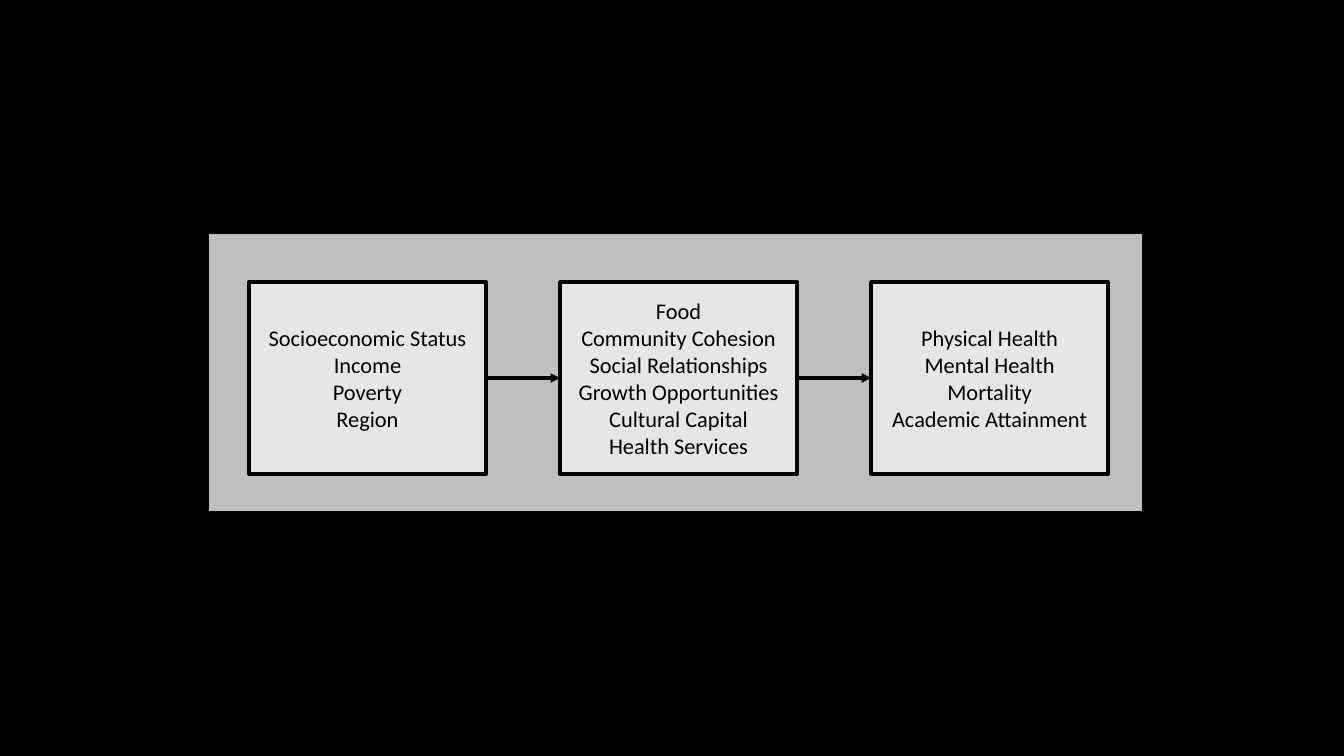
"""Build a slide that links social conditions to health outcomes."""
from lxml import etree
from pptx import Presentation
from pptx.dml.color import RGBColor
from pptx.enum import shapes, text
from pptx.oxml import ns
from pptx.util import Inches, Pt

BLACK = RGBColor(0x00, 0x00, 0x00)
WHITE = RGBColor(0xFF, 0xFF, 0xFF)
LIGHT_GREY = RGBColor(0xE7, 0xE6, 0xE6)

STAGES = [
    ["Socioeconomic Status", "Income", "Poverty", "Region"],
    ["Food", "Community Cohesion", "Social Relationships",
     "Growth Opportunities", "Cultural Capital", "Health Services"],
    ["Physical Health", "Mental Health", "Mortality", "Academic Attainment"],
]
FIRST_LEFT, STAGE_TOP = 2.47, 2.8
STAGE_WIDTH, STAGE_HEIGHT = 2.35, 1.9
STAGE_STEP = 3.085


class Diagram:
    """Hold the style and the current page of a flow diagram."""

    font_name = "Calibri"
    font_size = Pt(16)
    arrow_width = Pt(2.25)

    def __init__(self, page):
        self.page = page
        page.background.fill.solid()
        page.background.fill.fore_color.rgb = BLACK

    def rectangle(self, left, top, width, height, color, line_width):
        """Add a filled rectangle with a black outline."""
        box = self.page.shapes.add_shape(
            shapes.MSO_SHAPE.RECTANGLE,
            Inches(left), Inches(top), Inches(width), Inches(height))
        box.shadow.inherit = False
        box.fill.solid()
        box.fill.fore_color.rgb = color
        box.line.color.rgb = BLACK
        box.line.width = Pt(line_width)
        return box

    def panel(self, left, top, width, height, opacity):
        """Add a translucent white panel."""
        box = self.rectangle(left, top, width, height, WHITE, 11)
        color = box._element.spPr.find(ns.qn("a:solidFill"))[0]
        etree.SubElement(color, ns.qn("a:alpha"), val=str(opacity * 1000))

    def stage(self, left, lines):
        """Add a box with one centred paragraph per line."""
        box = self.rectangle(
            left, STAGE_TOP, STAGE_WIDTH, STAGE_HEIGHT, LIGHT_GREY, 3)
        frame = box.text_frame
        frame.word_wrap = True
        frame.vertical_anchor = text.MSO_ANCHOR.MIDDLE
        frame.text = "\n".join(lines)
        for para in frame.paragraphs:
            para.alignment = text.PP_ALIGN.CENTER
            para.font.name = self.font_name
            para.font.size = self.font_size
            para.font.color.rgb = BLACK
        return box

    def arrow(self, source, target):
        """Join the right side of one box to the left side of the next."""
        arrow = self.page.shapes.add_connector(
            shapes.MSO_CONNECTOR.STRAIGHT, 0, 0, 0, 0)
        arrow.begin_connect(source, 3)
        arrow.end_connect(target, 1)
        arrow.line.color.rgb = BLACK
        arrow.line.width = self.arrow_width
        properties = arrow._element.spPr
        outline = properties.find(ns.qn("a:ln"))
        etree.SubElement(outline, ns.qn("a:tailEnd"), type="triangle")
        etree.SubElement(properties, ns.qn("a:effectLst"))


def main():
    """Create and save the deck."""
    deck = Presentation()
    deck.slide_width, deck.slide_height = Inches(13.33), Inches(7.5)
    diagram = Diagram(deck.slides.add_slide(deck.slide_layouts[6]))
    diagram.panel(2, 2.24, 9.4, 2.91, opacity=75)
    boxes = [diagram.stage(FIRST_LEFT + index * STAGE_STEP, lines)
             for index, lines in enumerate(STAGES)]
    for source, target in zip(boxes, boxes[1:]):
        diagram.arrow(source, target)
    deck.save("out.pptx")


if __name__ == "__main__":
    main()
